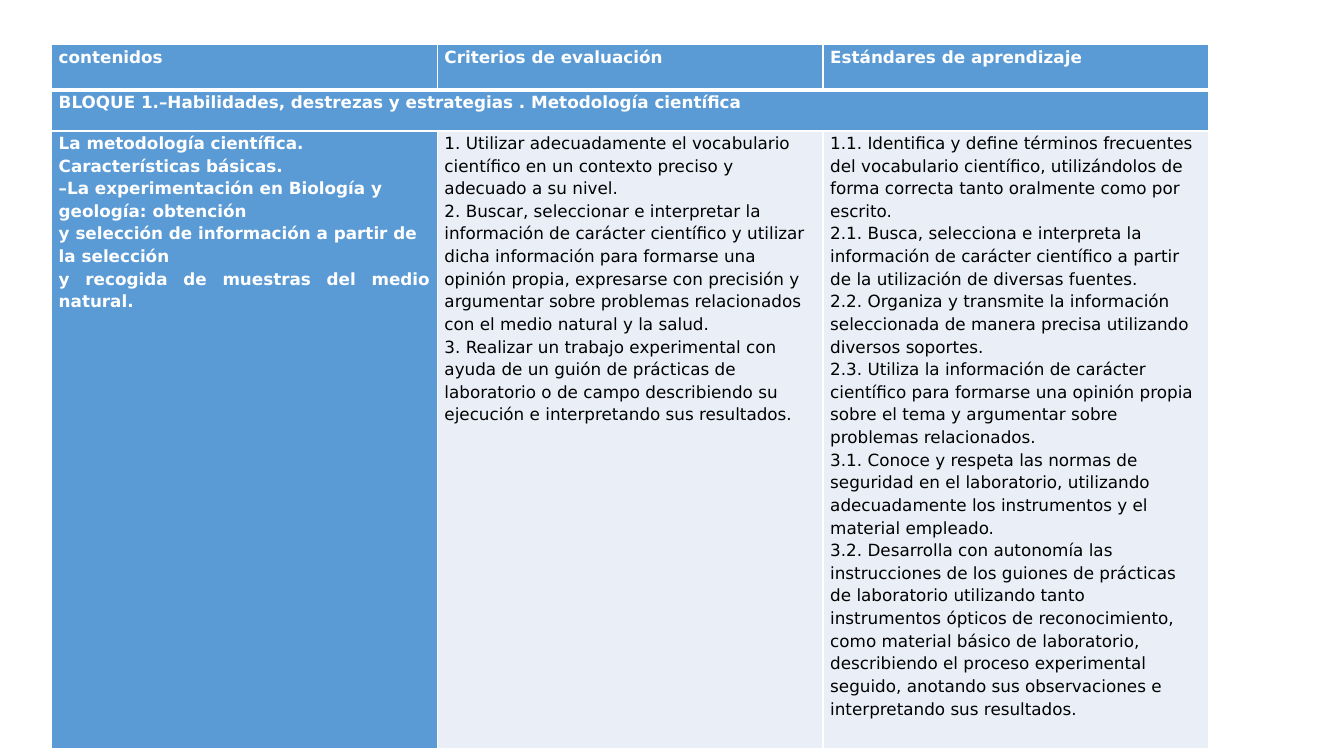
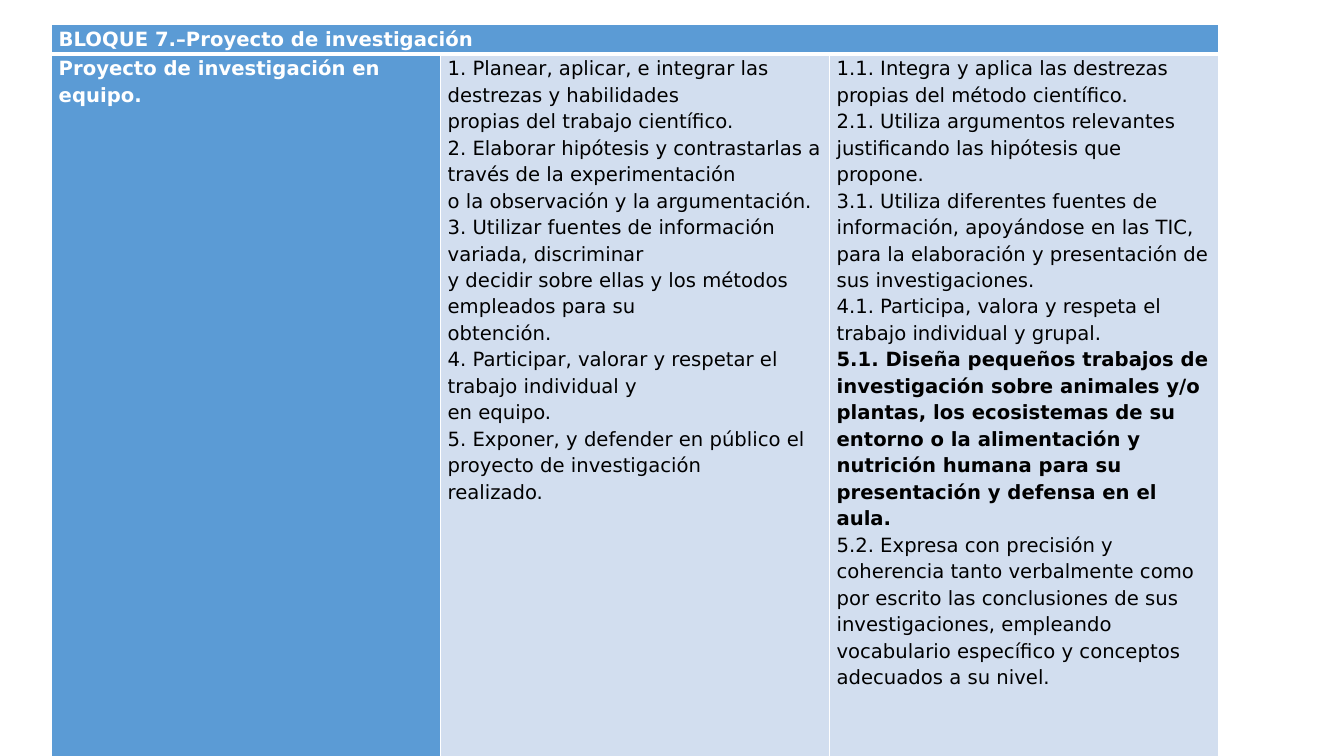
from dataclasses import dataclass

from lxml import etree
from pptx import Presentation
from pptx import util as u
from pptx.dml import color
from pptx.enum import text
from pptx.oxml import ns

FONT = "DejaVu Sans"
ACCENT = "5B9BD5"
WHITE = "FFFFFF"
BLACK = "000000"
LIGHT_BAND = "EAEFF7"
DARK_BAND = "D2DEEF"


def rgb(value):
    return color.RGBColor.from_string(value)


@dataclass
class Entry:
    text: str
    bold: bool = False
    justified: bool = False


class Deck:
    left = 1.3
    inset = 0.18
    line_spacing = 1.15
    border = 1
    header_border = 3

    def __init__(self):
        self.presentation = Presentation()
        self.presentation.slide_width = u.Inches(13.333)
        self.presentation.slide_height = u.Inches(7.5)
        self.slide = None

    def add_slide(self):
        self.slide = self.presentation.slides.add_slide(self.presentation.slide_layouts[6])

    def add_border(self, cell, side, width):
        properties = cell._tc.get_or_add_tcPr()
        line = etree.SubElement(properties, ns.qn(f"a:ln{side}"), w=str(u.Pt(width)))
        fill = etree.SubElement(line, ns.qn("a:solidFill"))
        etree.SubElement(fill, ns.qn("a:srgbClr"), val=WHITE)

    def fill_cell(self, cell, entries, size, fill, highlighted):
        cell.margin_left = cell.margin_right = u.Cm(self.inset)
        cell.margin_top = cell.margin_bottom = 0
        cell.fill.solid()
        cell.fill.fore_color.rgb = rgb(fill)
        cell.text_frame.text = "\n".join(entry.text for entry in entries)
        for paragraph, entry in zip(cell.text_frame.paragraphs, entries):
            paragraph.line_spacing = self.line_spacing
            paragraph.alignment = text.PP_ALIGN.JUSTIFY if entry.justified else text.PP_ALIGN.LEFT
            for run in paragraph.runs:
                run.font.name = FONT
                run.font.size = u.Pt(size)
                run.font.bold = highlighted or entry.bold
                run.font.color.rgb = rgb(WHITE if highlighted else BLACK)

    def add_table(self, top, column_width, row_heights, rows, size, band):
        columns = len(rows[-1])
        table = self.slide.shapes.add_table(
            len(rows), columns, u.Cm(self.left), u.Cm(top),
            u.Cm(column_width * columns), u.Cm(sum(row_heights))).table
        table.first_row = table.horz_banding = False
        for column in table.columns:
            column.width = u.Cm(column_width)
        for row_index, (height, contents) in enumerate(zip(row_heights, rows)):
            table.rows[row_index].height = u.Cm(height)
            if len(contents) == 1:
                table.cell(row_index, 0).merge(table.cell(row_index, columns - 1))
            is_heading = row_index < len(rows) - 1
            for column_index in range(columns):
                cell = table.cell(row_index, column_index)
                widths = {
                    "L": self.border,
                    "R": self.border,
                    "T": self.header_border if row_index == 1 else self.border,
                    "B": self.header_border if row_index == 0 else self.border,
                }
                for side, width in widths.items():
                    self.add_border(cell, side, width)
                entries = [
                    entry if isinstance(entry, Entry) else Entry(entry)
                    for entry in (contents[column_index] if column_index < len(contents) else [])
                ]
                highlighted = is_heading or column_index == 0
                self.fill_cell(cell, entries, size, ACCENT if highlighted else band, highlighted)

    def save(self):
        self.presentation.save("out.pptx")


METHOD_ROWS = [
    [
        [Entry(heading, justified=True)]
        for heading in ("contenidos", "Criterios de evaluación", "Estándares de aprendizaje")
    ],
    [[Entry("BLOQUE 1.–Habilidades, destrezas y estrategias . Metodología científica", justified=True)]],
    [
        [
            "La metodología científica. Características básicas.",
            "–La experimentación en Biología y geología: obtención",
            "y selección de información a partir de la selección",
            Entry("y recogida de muestras del medio natural.", justified=True),
        ],
        [
            "1. Utilizar adecuadamente el vocabulario científico en un contexto preciso y "
            "adecuado a su nivel.",
            "2. Buscar, seleccionar e interpretar la información de carácter científico y utilizar "
            "dicha información para formarse una opinión propia, expresarse con precisión y "
            "argumentar sobre problemas relacionados con el medio natural y la salud.",
            "3. Realizar un trabajo experimental con ayuda de un guión de prácticas de laboratorio "
            "o de campo describiendo su ejecución e interpretando sus resultados.",
        ],
        [
            "1.1. Identifica y define términos frecuentes del vocabulario científico, utilizándolos "
            "de forma correcta tanto oralmente como por escrito.",
            "2.1. Busca, selecciona e interpreta la información de carácter científico a partir de "
            "la utilización de diversas fuentes.",
            "2.2. Organiza y transmite la información seleccionada de manera precisa utilizando "
            "diversos soportes.",
            "2.3. Utiliza la información de carácter científico para formarse una opinión propia "
            "sobre el tema y argumentar sobre problemas relacionados.",
            "3.1. Conoce y respeta las normas de seguridad en el laboratorio, utilizando "
            "adecuadamente los instrumentos y el material empleado.",
            "3.2. Desarrolla con autonomía las instrucciones de los guiones de prácticas de "
            "laboratorio utilizando tanto instrumentos ópticos de reconocimiento, como material "
            "básico de laboratorio, describiendo el proceso experimental seguido, anotando sus "
            "observaciones e interpretando sus resultados.",
        ],
    ],
]

PROJECT_ROWS = [
    [["BLOQUE 7.–Proyecto de investigación"]],
    [
        ["Proyecto de investigación en equipo."],
        [
            "1. Planear, aplicar, e integrar las destrezas y habilidades",
            "propias del trabajo científico.",
            "2. Elaborar hipótesis y contrastarlas a través de la experimentación",
            "o la observación y la argumentación.",
            "3. Utilizar fuentes de información variada, discriminar",
            "y decidir sobre ellas y los métodos empleados para su",
            "obtención.",
            "4. Participar, valorar y respetar el trabajo individual y",
            "en equipo.",
            "5. Exponer, y defender en público el proyecto de investigación",
            "realizado.",
        ],
        [
            "1.1. Integra y aplica las destrezas propias del método científico.",
            "2.1. Utiliza argumentos relevantes justificando las hipótesis que propone.",
            "3.1. Utiliza diferentes fuentes de información, apoyándose en las TIC, para la "
            "elaboración y presentación de sus investigaciones.",
            "4.1. Participa, valora y respeta el trabajo individual y grupal.",
            Entry("5.1. Diseña pequeños trabajos de investigación sobre animales y/o plantas, los "
                  "ecosistemas de su entorno o la alimentación y nutrición humana para su "
                  "presentación y defensa en el aula.", bold=True),
            "5.2. Expresa con precisión y coherencia tanto verbalmente como por escrito las "
            "conclusiones de sus investigaciones, empleando vocabulario específico y conceptos "
            "adecuados a su nivel.",
        ],
    ],
]


def main():
    deck = Deck()
    deck.add_slide()
    deck.add_table(1.12, 9.72, [1.14, 1.04, 15.57], METHOD_ROWS, 12, LIGHT_BAND)
    deck.add_slide()
    deck.add_table(0.62, 9.8, [0.74, 17.96], PROJECT_ROWS, 14, DARK_BAND)
    deck.save()


if __name__ == "__main__":
    main()
